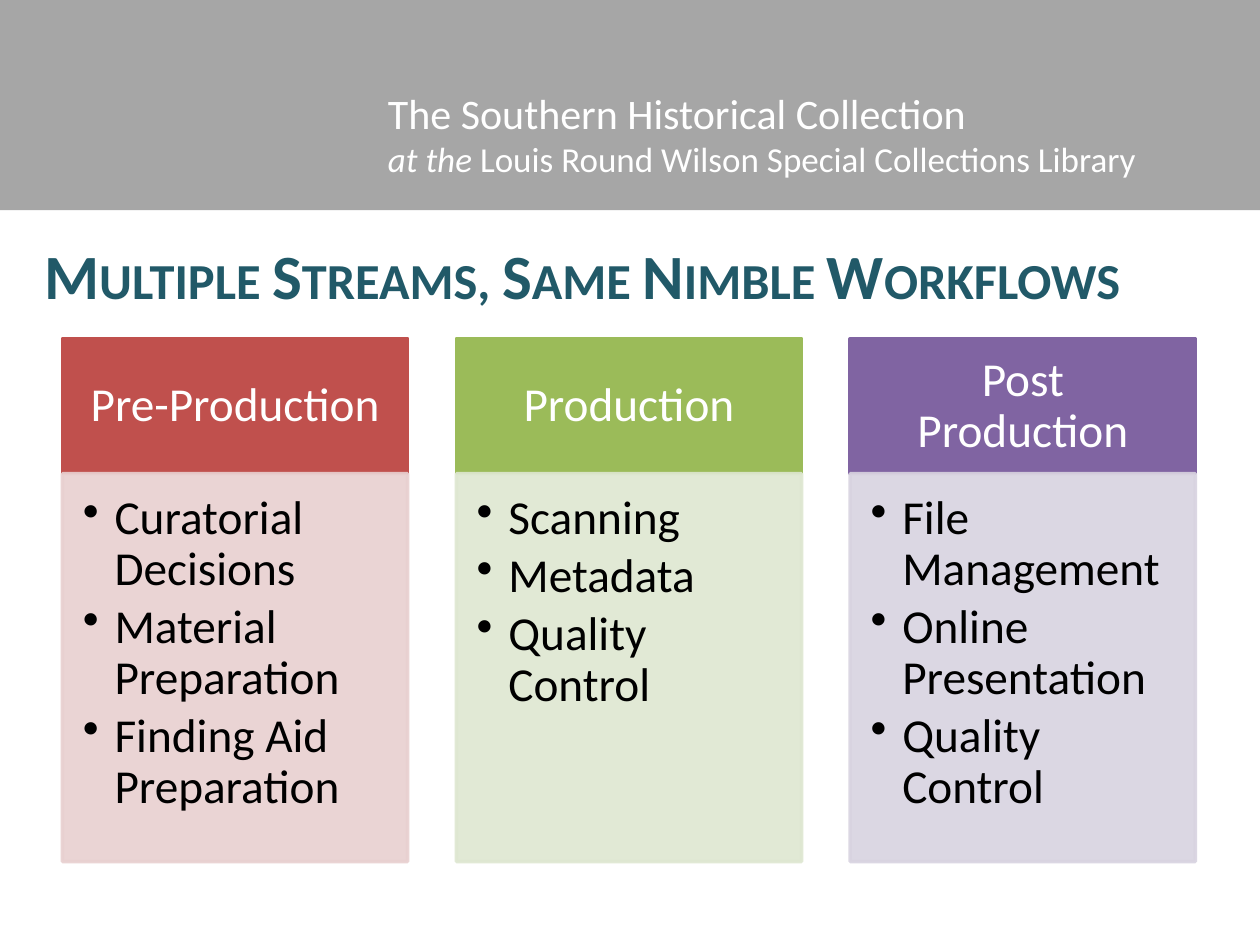
from lxml.etree import SubElement
from pptx import Presentation
from pptx.dml.color import RGBColor
from pptx.enum.shapes import MSO_SHAPE
from pptx.enum.text import MSO_ANCHOR, MSO_AUTO_SIZE, PP_ALIGN
from pptx.oxml.ns import qn
from pptx.util import Cm, Pt

COLUMNS = [
    ("Pre-Production", "C0504D", "E8D0D0",
     ["Curatorial Decisions", "Material Preparation", "Finding Aid Preparation"]),
    ("Production", "9BBB59", "DEE7D1",
     ["Scanning", "Metadata", "Quality Control"]),
    ("Post Production", "8064A2", "D8D3E0",
     ["File Management", "Online Presentation", "Quality Control"]),
]
COLUMN_LEFT, COLUMN_PITCH, COLUMN_WIDTH = 1.26, 7.94, 6.96
HEADER_TOP, HEADER_HEIGHT, BODY_HEIGHT = 6.83, 2.72, 7.82


def color(value):
    """Turn a hex string into a colour."""
    return RGBColor.from_string(value)


def style_font(font, size, value):
    """Set typeface, size and colour of a font."""
    font.name = "Calibri"
    font.size = Pt(size)
    font.color.rgb = color(value)


def set_insets(frame, left, top, right, bottom):
    """Set the inner margins of a text frame in centimetres."""
    frame.margin_left, frame.margin_top = Cm(left), Cm(top)
    frame.margin_right, frame.margin_bottom = Cm(right), Cm(bottom)


def set_opacity(paint, percent):
    """Make a solid fill partly transparent."""
    for node in paint.fore_color._xFill.iter(qn("a:srgbClr")):
        SubElement(node, qn("a:alpha"), val=str(percent * 1000))


def add_block(page, left, top, width, height, value, outlined=True, opacity=100):
    """Add a rectangle with a solid fill and a matching outline."""
    block = page.shapes.add_shape(
        MSO_SHAPE.RECTANGLE, Cm(left), Cm(top), Cm(width), Cm(height))
    block.shadow.inherit = False
    paints = [block.fill]
    if outlined:
        block.line.width = Pt(2)
        paints.append(block.line.fill)
    else:
        block.line.fill.background()
    for paint in paints:
        paint.solid()
        paint.fore_color.rgb = color(value)
        if opacity < 100:
            set_opacity(paint, opacity)
    block.text_frame.word_wrap = True
    return block


def add_text_box(page, left, top, width, height):
    """Add a wrapping text box and return its text frame."""
    box = page.shapes.add_textbox(Cm(left), Cm(top), Cm(width), Cm(height))
    box.text_frame.word_wrap = True
    box.text_frame.auto_size = MSO_AUTO_SIZE.SHAPE_TO_FIT_TEXT
    return box.text_frame


def add_bullet(para):
    """Give a paragraph a hanging round bullet."""
    properties = para._p.get_or_add_pPr()
    properties.set("marL", str(Cm(0.64)))
    properties.set("indent", str(-Cm(0.64)))
    SubElement(properties, qn("a:buChar"), char="•")


def add_banner(page):
    """Add the grey band with the name of the collection."""
    add_block(page, 0, 0, 25.4, 4.24, "A6A6A6", outlined=False)
    frame = add_text_box(page, 7.57, 1.63, 17.78, 2.13)
    name, place = frame.paragraphs[0], frame.add_paragraph()
    name.text = "The Southern Historical Collection"
    style_font(name.font, 24, "FFFFFF")
    style_font(place.font, 20, "FFFFFF")
    span = place.add_run()
    span.text = "at the "
    span.font.italic = True
    place.add_run().text = "Louis Round Wilson Special Collections Library"


def add_title(page):
    """Add the slide title in small capitals."""
    para = add_text_box(page, 0.64, 4.65, 23.06, 1.8).paragraphs[0]
    span = para.add_run()
    span.text = "Multiple Streams, Same Nimble Workflows"
    style_font(span.font, 36, "215968")
    span.font.bold = True
    span._r.get_or_add_rPr().set("cap", "small")


def add_header(page, left, text, value):
    """Add the coloured head of a column."""
    block = add_block(page, left, HEADER_TOP, COLUMN_WIDTH, HEADER_HEIGHT, value)
    frame = block.text_frame
    frame.vertical_anchor = MSO_ANCHOR.MIDDLE
    set_insets(frame, 0.53, 0.3, 0.53, 0.3)
    para = frame.paragraphs[0]
    para.text = text
    para.alignment = PP_ALIGN.CENTER
    para.line_spacing = 0.9
    style_font(para.font, 27, "FFFFFF")


def add_body(page, left, items, value):
    """Add the pale bulleted list of a column."""
    block = add_block(page, left, HEADER_TOP + HEADER_HEIGHT, COLUMN_WIDTH,
                      BODY_HEIGHT, value, opacity=90)
    frame = block.text_frame
    frame.vertical_anchor = MSO_ANCHOR.TOP
    set_insets(frame, 0.41, 0.41, 0.53, 0.61)
    frame.text = "\n".join(items)
    for para in frame.paragraphs:
        para.level = 1
        para.alignment = PP_ALIGN.LEFT
        para.line_spacing = 0.9
        para.space_after = Pt(3.7)
        add_bullet(para)
        style_font(para.font, 27, "000000")


def main():
    """Build the slide and save it."""
    deck = Presentation()
    deck.slide_width, deck.slide_height = Cm(25.4), Cm(19.05)
    page = deck.slides.add_slide(deck.slide_layouts[6])
    add_banner(page)
    for index, (heading, strong, pale, items) in enumerate(COLUMNS):
        left = COLUMN_LEFT + index * COLUMN_PITCH
        add_header(page, left, heading, strong)
        add_body(page, left, items, pale)
    add_title(page)
    deck.save("out.pptx")


if __name__ == "__main__":
    main()
